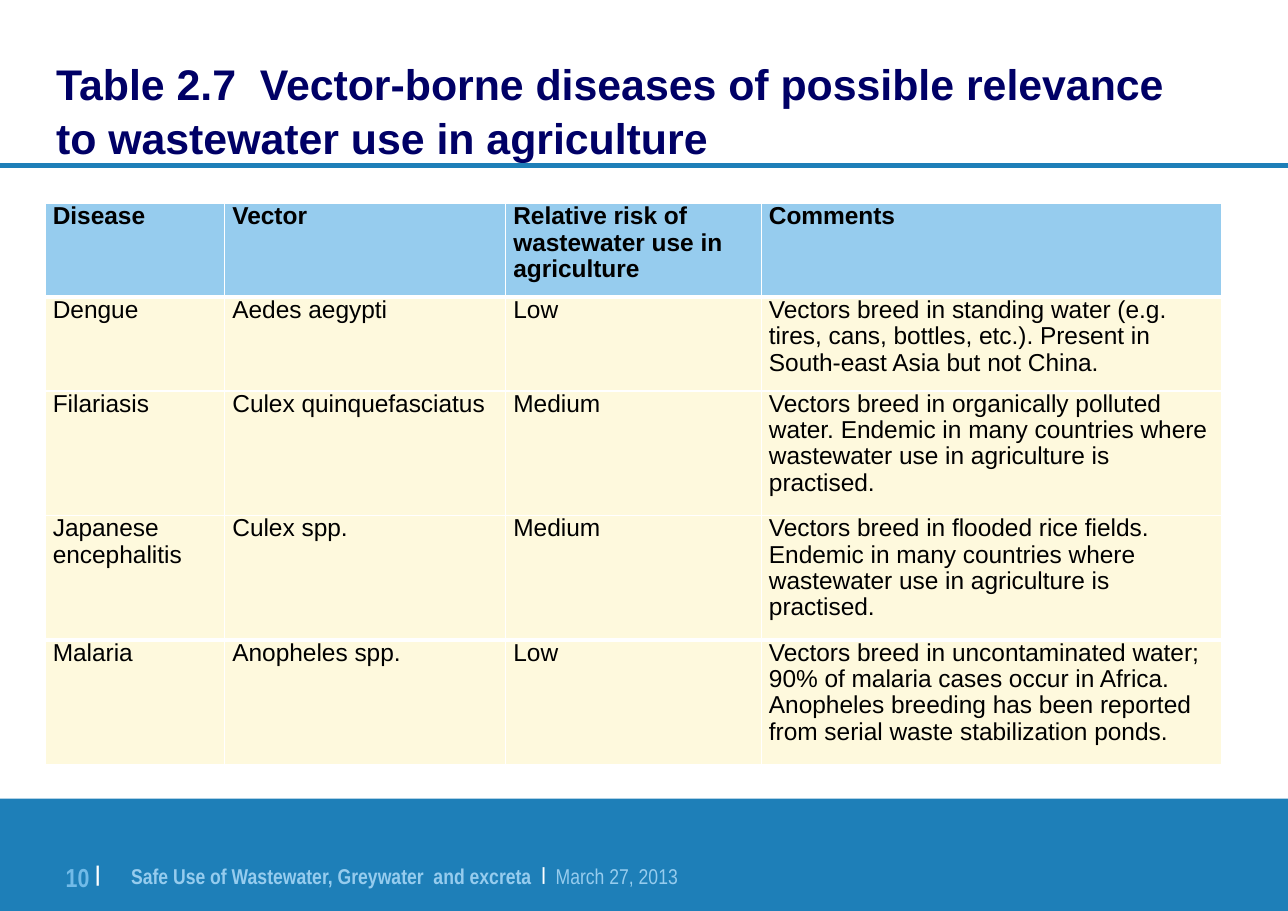
from dataclasses import dataclass

from lxml.etree import SubElement
from pptx import Presentation
from pptx.dml.color import RGBColor as RGB
from pptx.enum.shapes import MSO_CONNECTOR, MSO_SHAPE
from pptx.enum.text import MSO_ANCHOR, MSO_AUTO_SIZE, PP_ALIGN
from pptx.oxml.ns import qn
from pptx.util import Inches, Pt

TITLE = "Table 2.7  Vector-borne diseases of possible relevance to wastewater use in agriculture"
ROWS = [
    ("Disease", "Vector", "Relative risk of wastewater use in agriculture", "Comments"),
    ("Dengue", "Aedes aegypti", "Low",
     "Vectors breed in standing water (e.g. tires, cans, bottles, etc.). "
     "Present in South-east Asia but not China."),
    ("Filariasis", "Culex quinquefasciatus", "Medium",
     "Vectors breed in organically polluted water. Endemic in many countries "
     "where wastewater use in agriculture is practised."),
    ("Japanese encephalitis", "Culex spp.", "Medium",
     "Vectors breed in flooded rice fields. Endemic in many countries "
     "where wastewater use in agriculture is practised."),
    ("Malaria", "Anopheles spp.", "Low",
     "Vectors breed in uncontaminated water; 90% of malaria cases occur in Africa. "
     "Anopheles breeding has been reported from serial waste stabilization ponds."),
]
COL_WIDTHS = (1.63, 2.55, 2.32, 4.18)
ROW_HEIGHTS = (0.85, 0.85, 1.13, 1.13, 1.13)
THICK_RULES = (1, 4)  # rows with a thick rule above


@dataclass(frozen=True)
class Theme:
    font: str = "Arial"
    narrow: str = "Arial Narrow"
    title: str = "000066"
    band: str = "1E7FB8"
    header: str = "96CCEE"
    body: str = "FEF9DD"
    number: str = "72BBE8"
    black: str = "000000"
    white: str = "FFFFFF"
    title_size: int = 28
    table_size: int = 16
    footer_size: int = 14
    number_size: int = 17
    footer_bar_size: int = 20
    number_bar_size: int = 24


T = Theme()
# Runs: text, size, colour, bold, baseline shift in percent
FOOTER = [
    ("Safe Use of Wastewater, Greywater  and excreta  ", T.footer_size, T.header, True, 0),
    ("|", T.footer_bar_size, T.white, True, 12),
    ("  ", T.footer_size, T.header, True, 0),
    ("March 27, 2013", T.footer_size, T.header, False, 0),
]
NUMBER = [
    ("10 ", T.number_size, T.number, True, 0),
    ("|", T.number_bar_size, T.white, True, 14),
]


def set_font(font, name, size, color, bold):
    font.name, font.size, font.bold = name, Pt(size), bold
    font.color.rgb = RGB.from_string(color)


def add_title(slide):
    sp = slide.shapes.title
    sp.left, sp.top, sp.width, sp.height = map(Inches, (0.41, 0.47, 10.63, 1.04))
    tf = sp.text_frame
    tf.text = TITLE
    tf.word_wrap = True
    tf.auto_size = MSO_AUTO_SIZE.NONE
    tf.vertical_anchor = MSO_ANCHOR.MIDDLE
    p = tf.paragraphs[0]
    p.alignment = PP_ALIGN.LEFT
    p.line_spacing = 1.06
    set_font(p.font, T.font, T.title_size, T.title, True)


def add_bands(slide, width):
    line = slide.shapes.add_connector(
        MSO_CONNECTOR.STRAIGHT, 0, Inches(1.5), width, Inches(1.5))
    line.line.color.rgb = RGB.from_string(T.band)
    line.line.width = Pt(3)
    SubElement(line._element.spPr, qn("a:effectLst"))

    band = slide.shapes.add_shape(
        MSO_SHAPE.RECTANGLE, 0, Inches(7.25), width, Inches(1.02))
    band.shadow.inherit = False
    band.fill.solid()
    band.fill.fore_color.rgb = RGB.from_string(T.band)
    band.line.fill.background()


def add_footer_text(slide, box, runs, align):
    tf = slide.shapes.add_textbox(*map(Inches, box)).text_frame
    tf.word_wrap = True
    tf.margin_left = tf.margin_top = tf.margin_right = tf.margin_bottom = 0
    p = tf.paragraphs[0]
    p.alignment = align
    for text, size, color, bold, shift in runs:
        r = p.add_run()
        r.text = text
        set_font(r.font, T.narrow, size, color, bold)
        if shift:
            r._r.get_or_add_rPr().set("baseline", str(shift * 1000))


def add_borders(cell, top, bottom):
    tcPr = cell._tc.get_or_add_tcPr()
    for side, width in (("L", 1), ("R", 1), ("T", top), ("B", bottom)):
        ln = SubElement(tcPr, qn(f"a:ln{side}"), w=str(Pt(width)))
        fill = SubElement(ln, qn("a:solidFill"))
        SubElement(fill, qn("a:srgbClr"), val=T.white)


def add_disease_table(slide):
    table = slide.shapes.add_table(
        len(ROWS), len(COL_WIDTHS), Inches(0.41), Inches(1.85),
        Inches(sum(COL_WIDTHS)), Inches(sum(ROW_HEIGHTS))).table
    for col, width in zip(table.columns, COL_WIDTHS):
        col.width = Inches(width)
    for i, (row, height, texts) in enumerate(zip(table.rows, ROW_HEIGHTS, ROWS)):
        row.height = Inches(height)
        top, bottom = (3 if edge in THICK_RULES else 1 for edge in (i, i + 1))
        for cell, text in zip(row.cells, texts):
            cell.text = text
            cell.margin_left = cell.margin_right = Inches(0.07)
            cell.margin_top = cell.margin_bottom = 0
            add_borders(cell, top, bottom)
            cell.fill.solid()
            cell.fill.fore_color.rgb = RGB.from_string(T.body if i else T.header)
            p = cell.text_frame.paragraphs[0]
            p.line_spacing = 0.97
            p.space_after = Pt(2)
            set_font(p.font, T.font, T.table_size, T.black, i == 0)


def main():
    prs = Presentation()
    prs.slide_width, prs.slide_height = Inches(11.69), Inches(8.27)
    slide = prs.slides.add_slide(prs.slide_layouts[5])
    add_title(slide)
    add_bands(slide, prs.slide_width)
    add_footer_text(slide, (1.19, 7.75, 5.43, 0.52), FOOTER, PP_ALIGN.LEFT)
    add_footer_text(slide, (0.46, 7.72, 0.45, 0.4), NUMBER, PP_ALIGN.RIGHT)
    add_disease_table(slide)
    prs.save("out.pptx")


if __name__ == "__main__":
    main()
